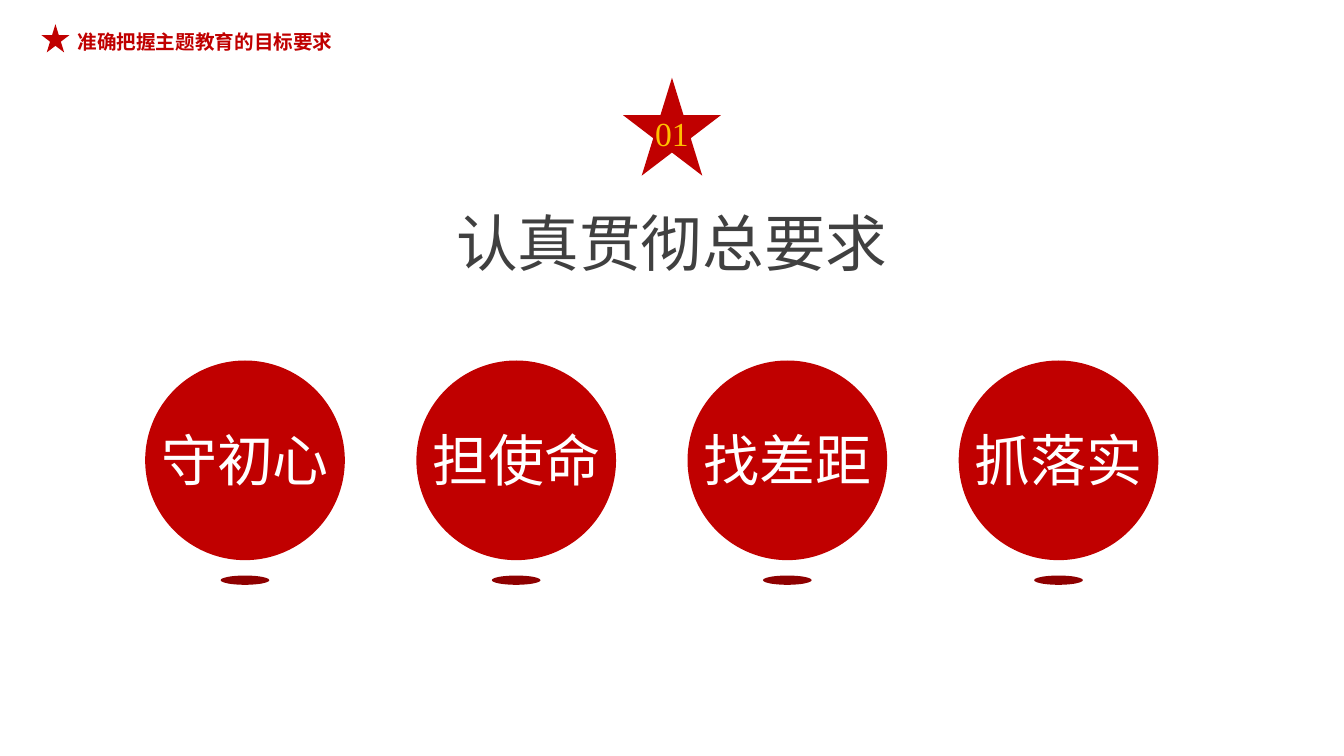
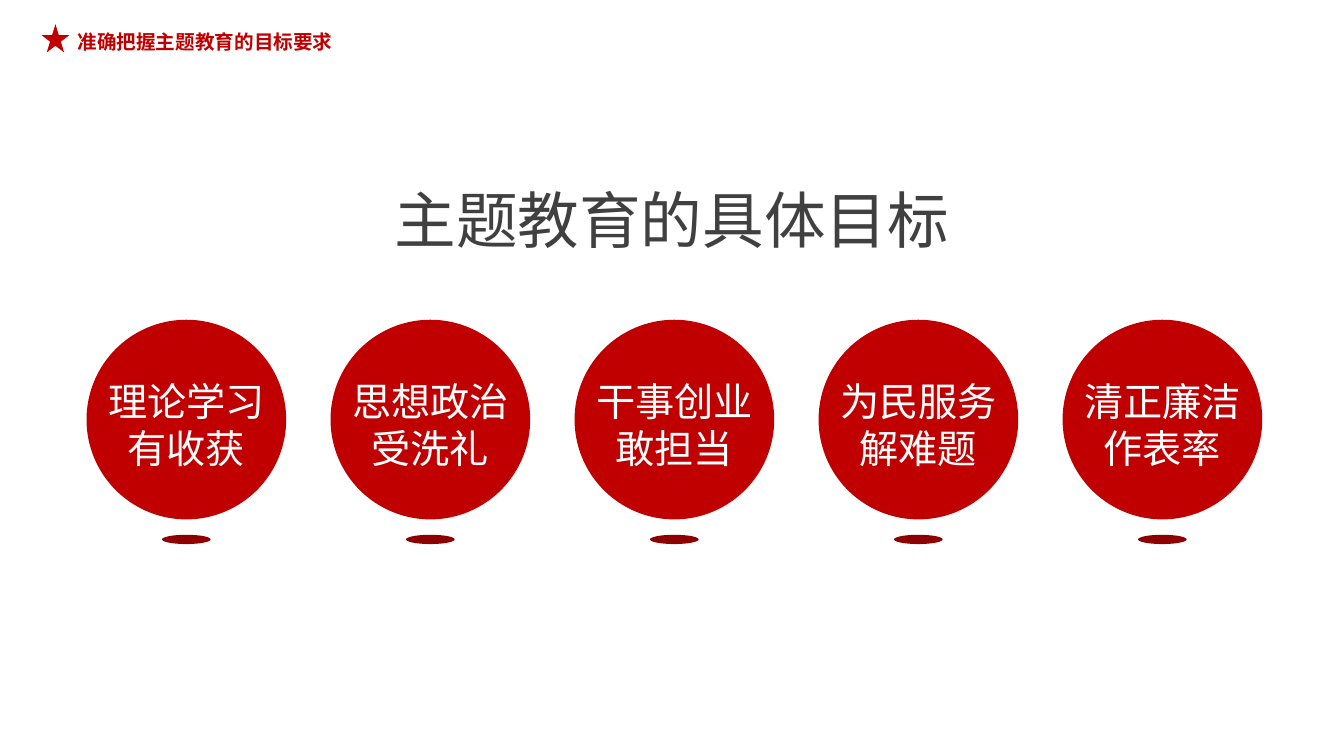
from lxml import etree
from pptx import Presentation
from pptx.dml.color import RGBColor as RGB
from pptx.enum.shapes import MSO_SHAPE as SHAPE
from pptx.enum.text import MSO_ANCHOR as ANCHOR, PP_ALIGN as ALIGN
from pptx.oxml.ns import qn
from pptx.util import Pt


class Deck:
    COLORS = {"red": "C00000", "dark": "8E0000", "gold": "FFC000",
              "gray": "404040", "white": "FFFFFF"}
    FONT = "Noto Sans CJK SC"
    HEADER = "准确把握主题教育的目标要求"
    CIRCLE = 142.6

    def __init__(self):
        self.prs = Presentation()
        self.prs.slide_width, self.prs.slide_height = Pt(960), Pt(540)
        self.s = None

    def color(self, name):
        return RGB.from_string(self.COLORS[name])

    def slide(self, title, top):
        self.s = self.prs.slides.add_slide(self.prs.slide_layouts[5])
        self.shape(self.s, SHAPE.STAR_5_POINT, 29.5, 17.3, 20.2, 20.2, "red")
        self.text(self.s, [self.HEADER], 48.2, 17.3, 198, 24.5, 14, "red",
                  bold=True, align=ALIGN.LEFT)
        sp = self.s.shapes.title
        sp.left, sp.top, sp.width, sp.height = Pt(180), Pt(top), Pt(600), Pt(60.5)
        self.set_text(sp.text_frame, [title], 44, "gray")

    def shape(self, parent, kind, x, y, w, h, fill):
        sp = parent.shapes.add_shape(kind, Pt(x), Pt(y), Pt(w), Pt(h))
        sp.shadow.inherit = False
        sp.fill.solid()
        sp.fill.fore_color.rgb = self.color(fill)
        sp.line.fill.background()

    def text(self, parent, lines, x, y, w, h, size, color, **style):
        sp = parent.shapes.add_textbox(Pt(x), Pt(y), Pt(w), Pt(h))
        self.set_text(sp.text_frame, lines, size, color, **style)

    def set_text(self, tf, lines, size, color, font=FONT, bold=False, align=ALIGN.CENTER):
        tf.word_wrap = False
        tf.vertical_anchor = ANCHOR.MIDDLE
        for i, line in enumerate(lines):
            p = tf.add_paragraph() if i else tf.paragraphs[0]
            p.alignment = align
            p.line_spacing = Pt(round(size * 1.2, 1))
            r = p.add_run()
            r.text = line
            r.font.size, r.font.bold, r.font.name = Pt(size), bold, font
            r.font.color.rgb = self.color(color)
            ea = etree.Element(qn("a:ea"), typeface=font)
            r._r.get_or_add_rPr().find(qn("a:latin")).addnext(ea)

    def badge(self, number):
        grp = self.s.shapes.add_group_shape()
        self.shape(grp, SHAPE.STAR_5_POINT, 445, 55.5, 70, 70, "red")
        self.text(grp, [number], 460.5, 77, 39, 36, 24, "gold", font="Times New Roman")

    def circles(self, items, left, top, pitch, size, text_dy):
        for i, lines in enumerate(items):
            x, d = left + i * pitch, self.CIRCLE
            grp = self.s.shapes.add_group_shape()
            self.shape(grp, SHAPE.OVAL, x, top, d, d, "red")
            self.shape(grp, SHAPE.OVAL, x + (d - 34.8) / 2, top + 153.6, 34.8, 6.6, "dark")
            self.text(grp, lines, x, top + text_dy, d, 75, size, "white")

    def save(self):
        self.prs.save("out.pptx")


def main():
    deck = Deck()
    deck.slide("认真贯彻总要求", 142.6)
    deck.badge("01")
    deck.circles([["守初心"], ["担使命"], ["找差距"], ["抓落实"]],
                 left=103.7, top=257.5, pitch=193.7, size=40, text_dy=33)
    deck.slide("主题教育的具体目标", 126)
    deck.circles([["理论学习", "有收获"], ["思想政治", "受洗礼"], ["干事创业", "敢担当"],
                  ["为民服务", "解难题"], ["清正廉洁", "作表率"]],
                 left=61.8, top=228.4, pitch=174.3, size=28, text_dy=37.5)
    deck.save()


if __name__ == "__main__":
    main()
